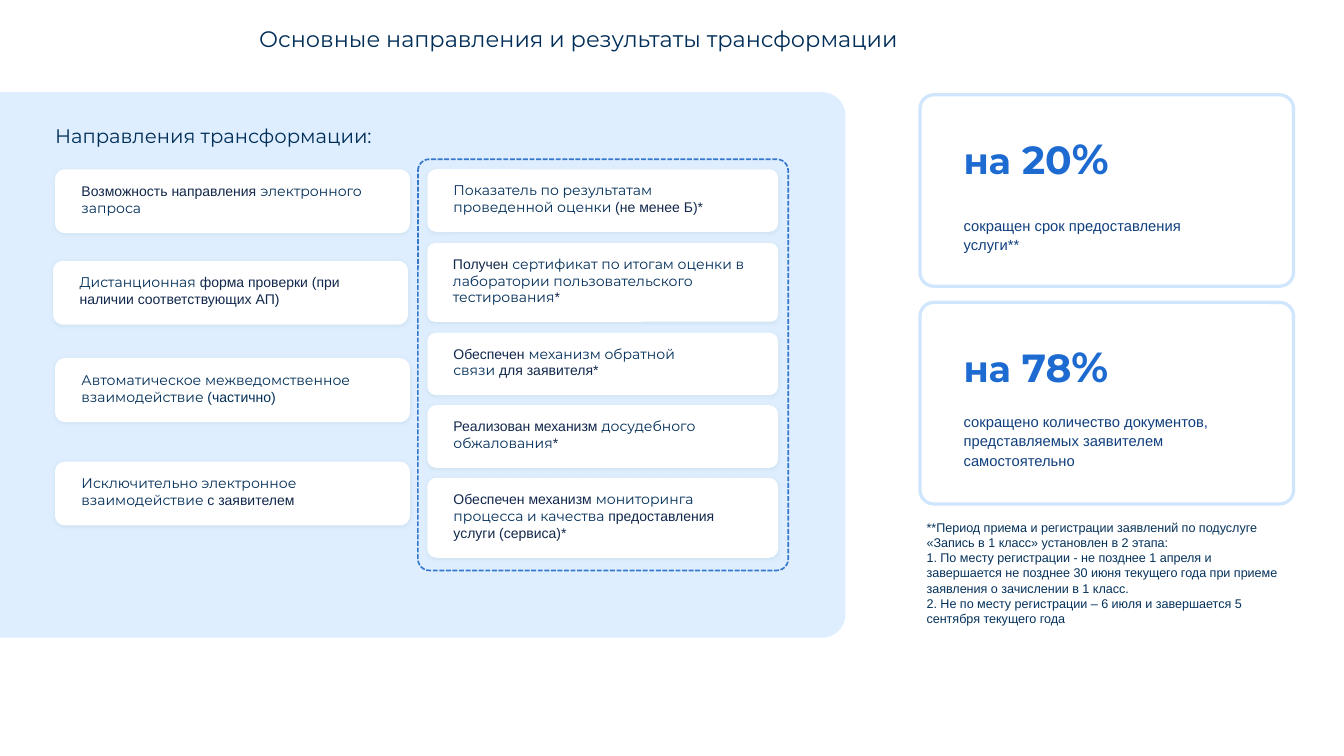
"""Build the slide on the directions and results of the transformation."""
from lxml import etree
from pptx import Presentation
from pptx.dml.color import RGBColor
from pptx.enum.dml import MSO_LINE
from pptx.enum.shapes import MSO_SHAPE
from pptx.enum.text import MSO_ANCHOR, MSO_AUTO_SIZE, PP_ALIGN
from pptx.oxml.ns import qn
from pptx.util import Pt

ROUNDED = MSO_SHAPE.ROUNDED_RECTANGLE
TOP_ROUNDED = MSO_SHAPE.ROUND_2_SAME_RECTANGLE
DASHED = MSO_LINE.SQUARE_DOT
TOP, MIDDLE = MSO_ANCHOR.TOP, MSO_ANCHOR.MIDDLE
LEFT, CENTER = PP_ALIGN.LEFT, PP_ALIGN.CENTER
GROW = MSO_AUTO_SIZE.SHAPE_TO_FIT_TEXT

COLORS = {
    "panel": "DEEEFE", "card": "FFFFFF", "shadow": "B4CDDE",
    "frame": "CFE6FD", "dashes": "3677CE",
    "title": "002E58", "detail": "11274B", "figure": "1D6AD1",
    "caption": "103F7E", "footnote": "05325B",
}
FONTS = {"main": "Montserrat", "plain": "Arial"}
STYLES = {
    "title": ("main", 24, "title"),
    "heading": ("main", 21, "title"),
    "main": ("main", 15, "title"),
    "detail": ("plain", 15, "detail"),
    "detail_dark": ("plain", 15, "title"),
    "word": ("main", 39, "figure"),
    "number": ("main", 42, "figure"),
    "percent": ("main", 45, "figure"),
    "caption": ("plain", 15.8, "caption"),
    "footnote": ("plain", 13.5, "footnote"),
}
NO_INSETS = (0, 0, 0, 0)
CARD_INSETS = (25.2, 10.8, 21.6, 15.1)
FOOTNOTE_INSETS = (7.2, 3.6, 7.2, 3.6)
BREAK = "\n"

DIRECTIONS = [
    (59, 181.4, [("Возможность направления ", "detail"), ("электронного запроса", "main")]),
    (56.9, 279.4, [("Дистанционная", "main"),
                   (" форма проверки (при наличии соответствующих АП)", "detail")]),
    (59, 383.8, [("Автоматическое межведомственное взаимодействие ", "main"),
                 ("(частично)", "detail_dark")]),
    (59, 494.6, [("Исключительно электронное взаимодействие ", "main"),
                 ("с заявителем", "detail")]),
]
RESULTS = [
    (181.4, 67, 0.137, [("Показатель по результатам проведенной оценки ", "main"),
                        ("(не менее Б)*", "detail")]),
    (260.6, 84.2, 0.09, [("Получен ", "detail"),
                         ("сертификат по итогам оценки в лаборатории "
                          "пользовательского тестирования", "main"), ("*", "detail")]),
    (356.4, 67, 0.137, [("Обеспечен ", "detail"), ("механизм обратной ", "main"),
                        (BREAK, "main"), ("связи", "main"), (" для заявителя*", "detail")]),
    (434.2, 67, 0.137, [("Реализован механизм ", "detail"),
                        ("досудебного обжалования", "main"), ("*", "detail")]),
    (511.9, 85.7, 0.111, [("Обеспечен механизм ", "detail"),
                          ("мониторинга процесса и качества ", "main"),
                          ("предоставления услуги (сервиса)*", "detail")]),
]
FOOTNOTES = [
    "**Период приема и регистрации заявлений по подуслуге «Запись в 1 класс» "
    "установлен в 2 этапа:",
    "1. По месту регистрации - не позднее 1 апреля и завершается не позднее 30 июня "
    "текущего года при приеме заявления о зачислении в 1 класс.",
    "2. Не по месту регистрации – 6 июля и завершается 5 сентября текущего года",
]


class SlideBuilder:
    """Hold the style and the current slide, and draw its elements."""

    def __init__(self, slide):
        self.slide = slide

    def color(self, name):
        """Return the named colour."""
        return RGBColor.from_string(COLORS[name])

    def fill_text(self, frame, paragraphs, insets, spacing=None, after=None,
                  anchor=TOP, align=LEFT):
        """Fill a text frame with paragraphs of (text, style) pieces."""
        frame.word_wrap = True
        frame.auto_size = GROW
        frame.vertical_anchor = anchor
        (frame.margin_left, frame.margin_top,
         frame.margin_right, frame.margin_bottom) = map(Pt, insets)
        for index, pieces in enumerate(paragraphs):
            paragraph = frame.add_paragraph() if index else frame.paragraphs[0]
            paragraph.alignment = align
            if spacing:
                paragraph.line_spacing = Pt(spacing)
            if after:
                paragraph.space_after = Pt(after)
            for text, style in pieces:
                if text == BREAK:
                    paragraph.add_line_break()
                    continue
                family, size, color = STYLES[style]
                run = paragraph.add_run()
                run.text = text
                run.font.name = FONTS[family]
                run.font.size = Pt(size)
                run.font.bold = color == "figure"
                run.font.color.rgb = self.color(color)

    def title(self, box, text):
        """Place and fill the title placeholder."""
        title = self.slide.shapes.title
        title.left, title.top, title.width, title.height = map(Pt, box)
        self.fill_text(title.text_frame, [[(text, "title")]], NO_INSETS,
                       spacing=27, align=CENTER)

    def text(self, box, paragraphs, insets=NO_INSETS, **layout):
        """Add a text box."""
        holder = self.slide.shapes.add_textbox(*map(Pt, box))
        self.fill_text(holder.text_frame, paragraphs, insets, **layout)

    def shape(self, kind, box, corner, fill=None):
        """Add a shape without outline or shadow."""
        shape = self.slide.shapes.add_shape(kind, *map(Pt, box))
        shape.shadow.inherit = False
        shape.adjustments[0] = corner
        shape.line.fill.background()
        if fill:
            shape.fill.solid()
            shape.fill.fore_color.rgb = self.color(fill)
        else:
            shape.fill.background()
        return shape

    def panel(self, box):
        """Add the background panel with rounded right corners."""
        panel = self.shape(TOP_ROUNDED, box, 0.043, "panel")
        panel.rotation = 90

    def frame(self, box, corner, color, width, dash=None):
        """Add an unfilled rounded frame."""
        frame = self.shape(ROUNDED, box, corner)
        frame.line.color.rgb = self.color(color)
        frame.line.width = Pt(width)
        if dash:
            frame.line.dash_style = dash

    def card(self, box, corner, pieces):
        """Add a white card with a soft shadow."""
        card = self.shape(ROUNDED, box, corner, "card")
        effects = card.element.spPr.find(qn("a:effectLst"))
        shadow = etree.SubElement(effects, qn("a:outerShdw"), blurRad=str(Pt(4)),
                                  dist=str(Pt(1)), dir="5400000", rotWithShape="0")
        tint = etree.SubElement(shadow, qn("a:srgbClr"), val=COLORS["shadow"])
        etree.SubElement(tint, qn("a:alpha"), val="32000")
        self.fill_text(card.text_frame, [pieces], CARD_INSETS, spacing=18, after=9,
                       anchor=MIDDLE)

    def figure(self, box, number, insets=NO_INSETS, **layout):
        """Add a large percentage."""
        pieces = [("на", "word"), (f" {number}", "number"), ("%", "percent")]
        self.text(box, [pieces], insets, **layout)

    def caption(self, box, text):
        """Add the explanation under a percentage."""
        self.text(box, [[(text, "caption")]], spacing=21)


def main():
    """Build and save the slide."""
    deck = Presentation()
    deck.slide_width, deck.slide_height = Pt(1440), Pt(810)
    builder = SlideBuilder(deck.slides.add_slide(deck.slide_layouts[5]))

    builder.panel((160.6, -61.9, 584.6, 905.8))
    builder.frame((985.7, 324, 400.3, 216), 0.069, "frame", 3.5)
    builder.frame((447.8, 170.6, 396.7, 440.6), 0.031, "dashes", 1.75, DASHED)
    builder.frame((985.7, 101.5, 400.3, 205.2), 0.073, "frame", 3.5)

    builder.title((56.2, 28.8, 1126.8, 27.4),
                  "Основные направления и результаты трансформации")
    builder.text((59, 132.5, 465.8, 25.2), [[("Направления трансформации:", "heading")]])

    builder.caption((1032.5, 229.7, 265.7, 41), "сокращен срок предоставления услуги**")
    builder.figure((1032.5, 180.7, 275, 28.1), 20, (0, 3.6, 7.2, 3.6), spacing=12, after=6)
    builder.figure((1032.5, 365, 247.7, 54.7), 78)
    builder.caption((1032.5, 439.9, 337, 41),
                    "сокращено количество документов, представляемых заявителем самостоятельно")

    for left, top, pieces in DIRECTIONS:
        builder.card((left, top, 380.2, 68.4), 0.157, pieces)
    for top, height, corner, pieces in RESULTS:
        builder.card((457.9, top, 375.8, height), corner, pieces)

    builder.text((985.7, 553.7, 403.2, 121.7),
                 [[(note, "footnote")] for note in FOOTNOTES], FOOTNOTE_INSETS)
    deck.save("out.pptx")


if __name__ == "__main__":
    main()
